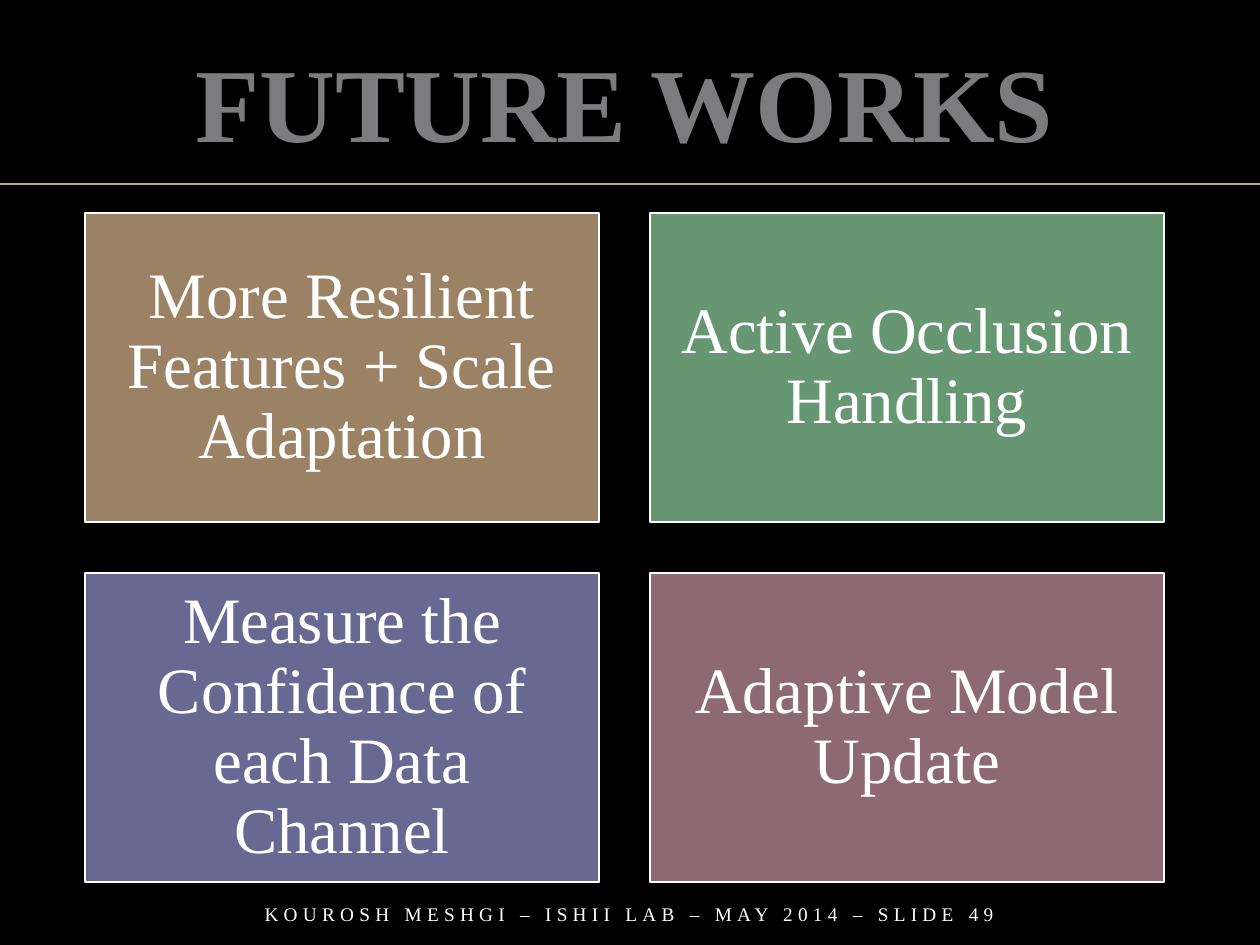
from pptx import Presentation
from pptx.dml.color import RGBColor
from pptx.enum.shapes import MSO_CONNECTOR, MSO_SHAPE
from pptx.enum.text import MSO_ANCHOR, PP_ALIGN
from pptx.oxml.ns import qn
from pptx.util import Emu, Pt

STRAIGHT = MSO_CONNECTOR.STRAIGHT
RECT = MSO_SHAPE.RECTANGLE
MIDDLE, TOP = MSO_ANCHOR.MIDDLE, MSO_ANCHOR.TOP
CENTER = PP_ALIGN.CENTER

PX = 914400 // 126
FONT = "Times New Roman"
BLACK = RGBColor(0x00, 0x00, 0x00)
WHITE = RGBColor(0xFF, 0xFF, 0xFF)
GRAY = RGBColor(0x7C, 0x7C, 0x7F)
SAND = RGBColor(0xBB, 0xAA, 0x8A)
BROWN = RGBColor(0x9C, 0x82, 0x65)
GREEN = RGBColor(0x66, 0x97, 0x72)
BLUE = RGBColor(0x68, 0x69, 0x92)
MAUVE = RGBColor(0x8D, 0x69, 0x74)


def px(*values):
    return [Emu(v * PX) for v in values]


def write(sp, text, size, color, anchor=MIDDLE):
    tf = sp.text_frame
    tf.text = text
    tf.word_wrap = True
    tf.vertical_anchor = anchor
    p = tf.paragraphs[0]
    p.alignment = CENTER
    r = p.runs[0]
    r.font.name = FONT
    r.font.size = Pt(size)
    r.font.color.rgb = color
    return p


prs = Presentation()
prs.slide_width, prs.slide_height = px(1260, 945)
s = prs.slides.add_slide(prs.slide_layouts[5])
s.background.fill.solid()
s.background.fill.fore_color.rgb = BLACK

# Rule under the title
rule = s.shapes.add_connector(STRAIGHT, *px(0, 184, 1260, 184))
rule.line.color.rgb = SAND
rule.line.width = Pt(1)
sp_pr = rule._element.spPr
sp_pr.append(sp_pr.makeelement(qn("a:effectLst"), {}))

# Title
title = s.shapes.title
title.left, title.top, title.width, title.height = px(21, 31, 1207, 140)
p = write(title, "FUTURE WORKS", 60, GRAY, TOP)
p.runs[0].font.bold = True

# Footer, letter-spaced by 3 pt
footer = s.shapes.add_textbox(*px(199, 894, 861, 40))
p = write(footer, "KOUROSH MESHGI – ISHII LAB – MAY 2014 – SLIDE 49", 11, WHITE)
p.runs[0].font._element.set("spc", "300")

# Two-by-two grid of topics
topics = [
    ("More Resilient Features + Scale Adaptation", BROWN),
    ("Active Occlusion Handling", GREEN),
    ("Measure the Confidence of each Data Channel", BLUE),
    ("Adaptive Model Update", MAUVE),
]
LEFT, TOP_EDGE, WIDTH, HEIGHT, GAP = 85, 213, 514, 309, 51
for i, (text, color) in enumerate(topics):
    row, col = divmod(i, 2)
    x = LEFT + col * (WIDTH + GAP)
    y = TOP_EDGE + row * (HEIGHT + GAP)
    sp = s.shapes.add_shape(RECT, *px(x, y, WIDTH, HEIGHT))
    sp.shadow.inherit = False
    sp.fill.solid()
    sp.fill.fore_color.rgb = color
    sp.line.color.rgb = WHITE
    sp.line.width = Pt(1.5)
    tf = sp.text_frame
    tf.margin_left, tf.margin_top, tf.margin_right, tf.margin_bottom = px(19, 19, 19, 19)
    p = write(sp, text, 37, WHITE)
    p.line_spacing = 0.9

prs.save("out.pptx")
